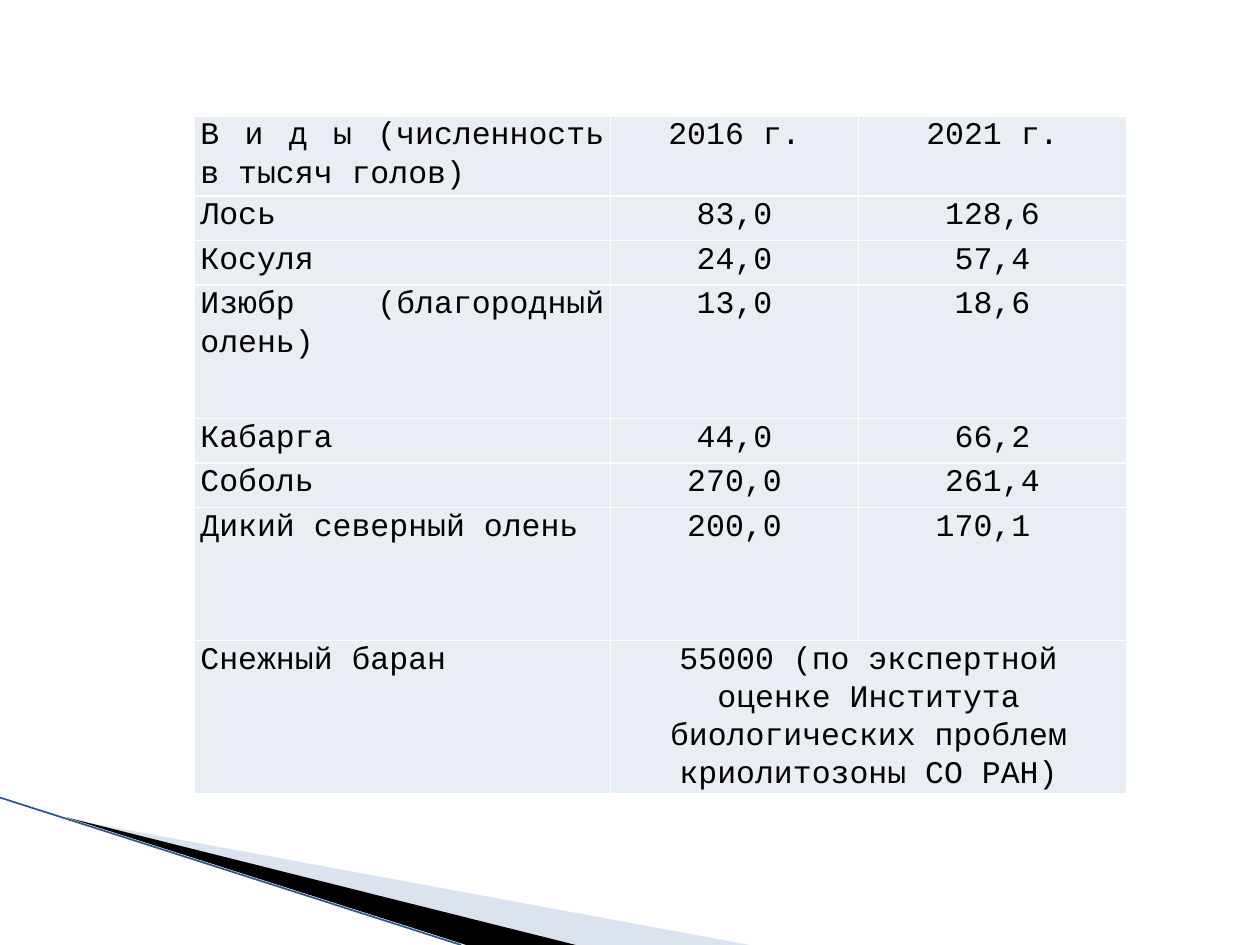
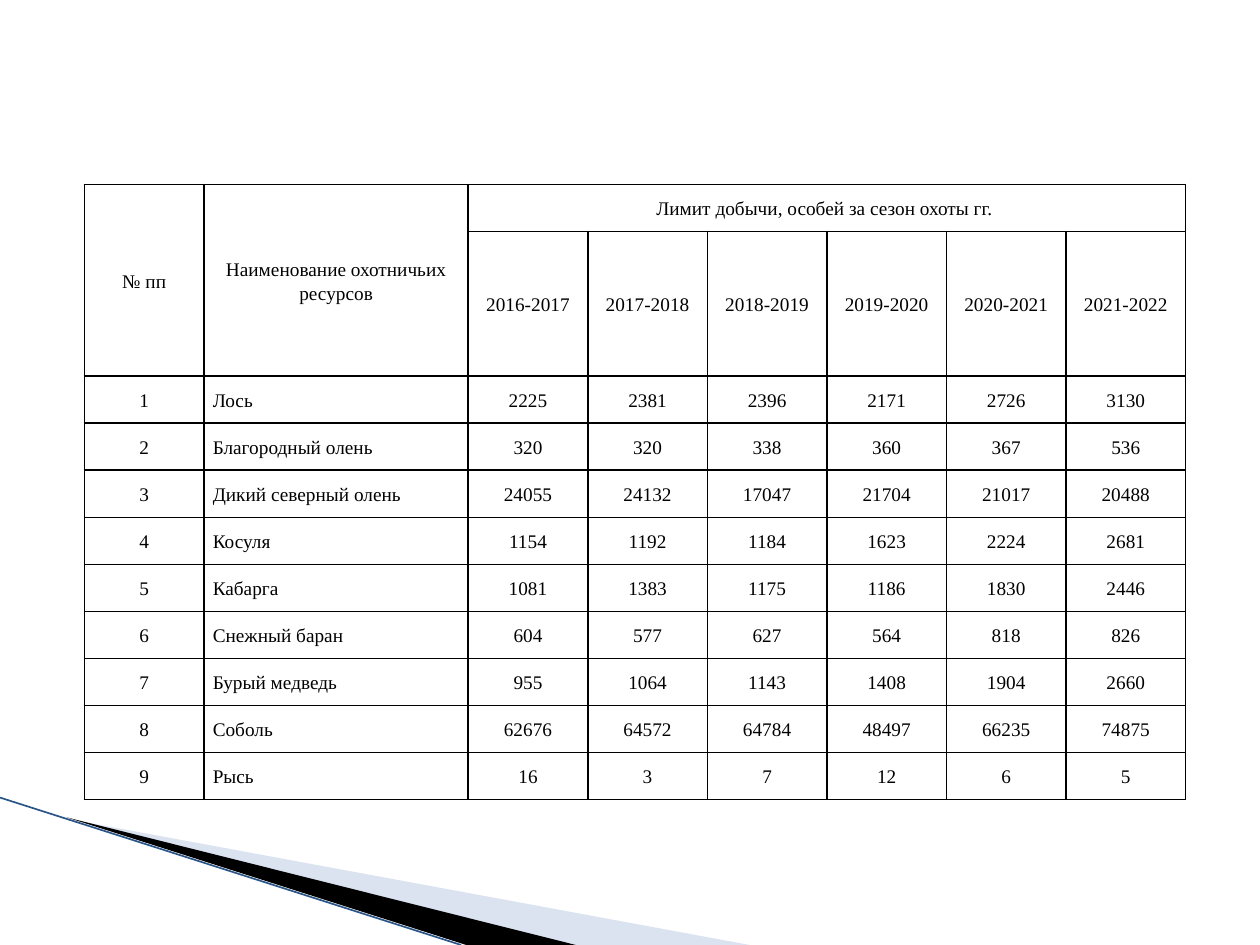
from dataclasses import dataclass

from lxml.etree import SubElement
from pptx import Presentation
from pptx.dml.color import RGBColor
from pptx.enum.shapes import MSO_CONNECTOR as Connector
from pptx.enum.text import MSO_ANCHOR as Anchor, PP_ALIGN as Align
from pptx.oxml import parse_xml
from pptx.oxml.ns import nsdecls, qn
from pptx.util import Emu, Inches, Pt

WIDTH, HEIGHT = Inches(10), Inches(7.5)
BLACK, WHITE = "000000", "FFFFFF"
PALE_CELL = "E9EDF4"
PALE_WEDGE = "A7B9DB"
EDGE_BLUE = "2A5588"

Point = tuple[float, float]


@dataclass(frozen=True)
class Wedge:
    points: tuple[Point, ...]
    color: str
    opacity: int = 100


@dataclass(frozen=True)
class TableStyle:
    font: str
    size: int
    line_spacing: float
    side_margin: float
    anchor: Anchor
    name_align: Align
    border: str
    fill: str | None = None


@dataclass(frozen=True)
class Grid:
    """Frame as shares of the slide; columns and rows as relative weights."""
    left: float
    top: float
    width: float
    height: float
    columns: tuple[float, ...]
    rows: tuple[float, ...]


@dataclass(frozen=True)
class Span:
    first: tuple[int, int]
    last: tuple[int, int]


# Corner decoration, in shares of the slide
WEDGES = (
    Wedge(((0.055, 0.867), (0.595, 1), (0.456, 1)), PALE_WEDGE, 40),
    Wedge(((0.053, 0.865), (0.457, 1), (0.37, 1)), BLACK),
)
EDGE = ((0, 0.844), (0.366, 1))

POPULATION_STYLE = TableStyle("Courier New", 18, 1.07, 0.05, Anchor.TOP,
                              Align.JUSTIFY, WHITE, PALE_CELL)
POPULATION_GRID = Grid(0.154, 0.123, 0.74, 0.682, (3.31, 1.97, 2.13),
                       (1.8, 1, 1, 3, 1, 1, 3, 2.7))
POPULATION = [
    ["В и д ы (численность в тысяч голов)", "2016 г.", "2021 г."],
    ["Лось", "83,0", "128,6"],
    ["Косуля", "24,0", "57,4"],
    ["Изюбр (благородный олень)", "13,0", "18,6"],
    ["Кабарга", "44,0", "66,2"],
    ["Соболь", "270,0", "261,4"],
    ["Дикий северный олень", "200,0", "170,1 "],
    ["Снежный баран", "55000 (по экспертной оценке Института "
     "биологических проблем криолитозоны СО РАН)", ""],
]

LIMITS_STYLE = TableStyle("Times New Roman", 11, 1.15, 0.07, Anchor.MIDDLE,
                          Align.LEFT, BLACK)
LIMITS_GRID = Grid(0.067, 0.195, 0.874, 0.651, (0.95, 2.1) + (0.95,) * 6,
                   (1, 3.08) + (1,) * 9)
SEASONS = [f"{year}-{year + 1}" for year in range(2016, 2022)]
LIMITS = {
    "Лось": (2225, 2381, 2396, 2171, 2726, 3130),
    "Благородный олень": (320, 320, 338, 360, 367, 536),
    "Дикий северный олень": (24055, 24132, 17047, 21704, 21017, 20488),
    "Косуля": (1154, 1192, 1184, 1623, 2224, 2681),
    "Кабарга": (1081, 1383, 1175, 1186, 1830, 2446),
    "Снежный баран": (604, 577, 627, 564, 818, 826),
    "Бурый медведь": (955, 1064, 1143, 1408, 1904, 2660),
    "Соболь": (62676, 64572, 64784, 48497, 66235, 74875),
    "Рысь": (16, 3, 7, 12, 6, 5),
}


def rgb(color: str) -> RGBColor:
    return RGBColor.from_string(color)


def across(share: float) -> Emu:
    return Emu(round(WIDTH * share))


def down(share: float) -> Emu:
    return Emu(round(HEIGHT * share))


def place(point: Point) -> tuple[Emu, Emu]:
    return across(point[0]), down(point[1])


def draw_wedge(page, wedge: Wedge) -> None:
    start, *others = map(place, wedge.points)
    builder = page.shapes.build_freeform(*start)
    builder.add_line_segments(others, close=True)
    shape = builder.convert_to_shape()
    shape.shadow.inherit = False
    shape.line.fill.background()
    shape.fill.solid()
    shape.fill.fore_color.rgb = rgb(wedge.color)
    if wedge.opacity < 100:
        color = shape.fill._xPr.find(".//" + qn("a:srgbClr"))
        SubElement(color, qn("a:alpha"), val=str(wedge.opacity * 1000))


def draw_corner(page) -> None:
    for wedge in WEDGES:
        draw_wedge(page, wedge)
    start, end = map(place, EDGE)
    edge = page.shapes.add_connector(Connector.STRAIGHT, *start, *end)
    edge.line.color.rgb = rgb(EDGE_BLUE)
    edge.line.width = Pt(0.95)
    SubElement(edge._element.spPr, qn("a:effectLst"))


def border_cell(cell, color: str) -> None:
    properties = cell._tc.get_or_add_tcPr()
    for index, side in enumerate("LRTB"):
        properties.insert(index, parse_xml(
            f'<a:ln{side} {nsdecls("a")} w="{Pt(1)}"><a:solidFill>'
            f'<a:srgbClr val="{color}"/></a:solidFill></a:ln{side}>'))


def write_cell(cell, text: str, align: Align, style: TableStyle) -> None:
    cell.margin_left = cell.margin_right = Inches(style.side_margin)
    cell.margin_top = cell.margin_bottom = 0
    cell.vertical_anchor = style.anchor
    if style.fill:
        cell.fill.solid()
        cell.fill.fore_color.rgb = rgb(style.fill)
    else:
        cell.fill.background()
    border_cell(cell, style.border)
    if text:
        para = cell.text_frame.paragraphs[0]
        para.alignment = align
        para.line_spacing = style.line_spacing
        span = para.add_run()
        span.text = text
        span.font.name = style.font
        span.font.size = Pt(style.size)
        span.font.color.rgb = rgb(BLACK)


def draw_table(page, grid: Grid, style: TableStyle, rows: list[list[str]],
               name_cells: set[tuple[int, int]], spans: list[Span]) -> None:
    """Fill a table; name_cells take the style's name alignment."""
    table = page.shapes.add_table(
        len(grid.rows), len(grid.columns), *place((grid.left, grid.top)),
        *place((grid.width, grid.height))).table
    table.first_row = table.horz_banding = False
    for column, weight in zip(table.columns, grid.columns):
        column.width = across(grid.width * weight / sum(grid.columns))
    for row, weight in zip(table.rows, grid.rows):
        row.height = down(grid.height * weight / sum(grid.rows))
    for r, texts in enumerate(rows):
        for c, text in enumerate(texts):
            align = style.name_align if (r, c) in name_cells else Align.CENTER
            write_cell(table.cell(r, c), text, align, style)
    for span in spans:
        table.cell(*span.first).merge(table.cell(*span.last))


def add_page(deck):
    page = deck.slides.add_slide(deck.slide_layouts[6])
    draw_corner(page)
    return page


def population_page(deck) -> None:
    names = {(r, 0) for r in range(len(POPULATION))}
    draw_table(add_page(deck), POPULATION_GRID, POPULATION_STYLE, POPULATION,
               names, [Span((7, 1), (7, 2))])


def limits_page(deck) -> None:
    rows = [["№ пп", "Наименование охотничьих ресурсов",
             "Лимит добычи, особей за сезон охоты гг. "] + [""] * 5,
            ["", ""] + SEASONS]
    for number, (animal, counts) in enumerate(LIMITS.items(), start=1):
        rows.append([str(number), animal, *map(str, counts)])
    names = {(r, 1) for r in range(2, len(rows))}
    spans = [Span((0, 0), (1, 0)), Span((0, 1), (1, 1)), Span((0, 2), (0, 7))]
    draw_table(add_page(deck), LIMITS_GRID, LIMITS_STYLE, rows, names, spans)


def main() -> None:
    deck = Presentation()
    deck.slide_width, deck.slide_height = WIDTH, HEIGHT
    population_page(deck)
    limits_page(deck)
    deck.save("out.pptx")


if __name__ == "__main__":
    main()
